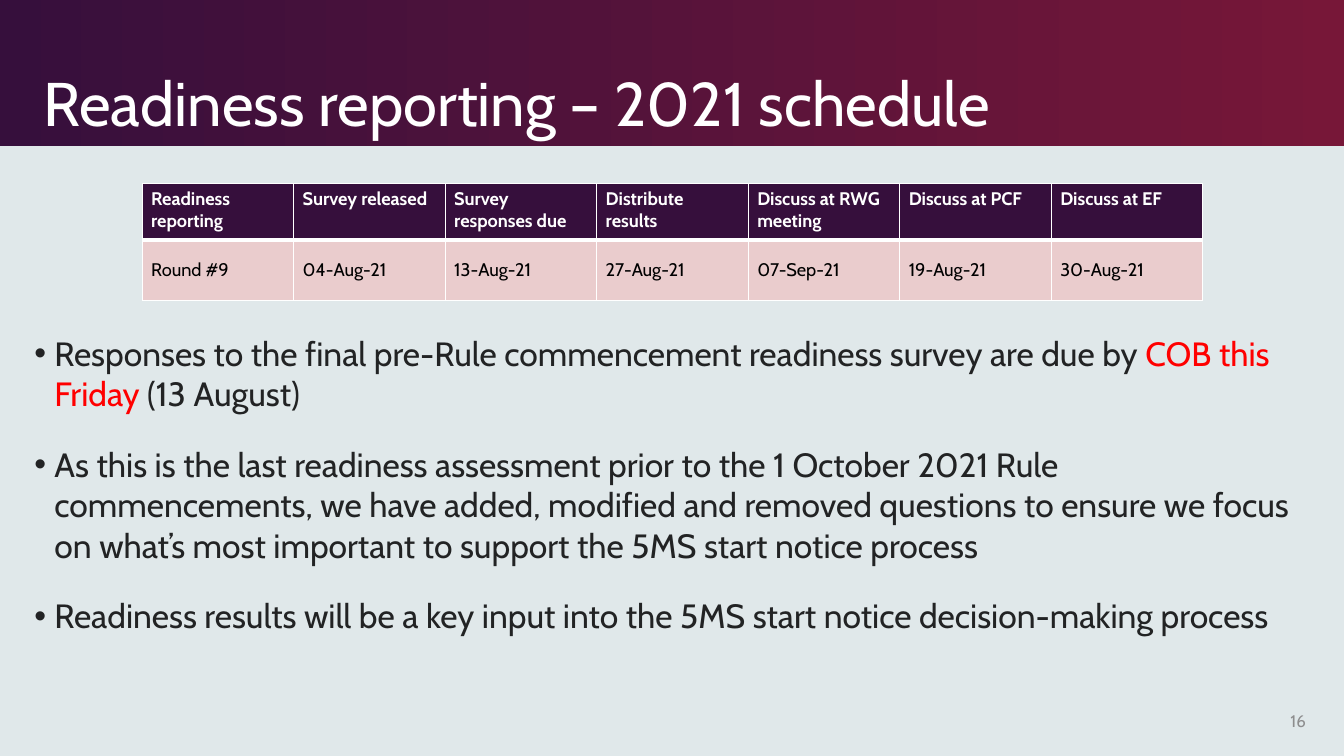
from lxml import etree
from pptx import Presentation
from pptx.dml.color import RGBColor
from pptx.enum.shapes import MSO_SHAPE
from pptx.enum.text import MSO_ANCHOR, MSO_AUTO_SIZE, PP_ALIGN
from pptx.oxml.ns import qn
from pptx.util import Pt

PX = 9144  # EMU in one px, 100 px to the inch
FONT = "Cabin"

PURPLE = RGBColor(0x36, 0x0F, 0x3C)
MAROON = RGBColor(0x77, 0x17, 0x38)
PINK = RGBColor(0xEA, 0xCC, 0xCD)
PALE = RGBColor(0xE0, 0xE8, 0xEA)
INK = RGBColor(0x22, 0x23, 0x24)
GREY = RGBColor(0x8D, 0x8D, 0x8E)
RED = RGBColor(0xFF, 0x00, 0x00)
BLACK = RGBColor(0x00, 0x00, 0x00)
WHITE = RGBColor(0xFF, 0xFF, 0xFF)

RECTANGLE = MSO_SHAPE.RECTANGLE
TOP, MIDDLE, BOTTOM = MSO_ANCHOR.TOP, MSO_ANCHOR.MIDDLE, MSO_ANCHOR.BOTTOM
LEFT, RIGHT = PP_ALIGN.LEFT, PP_ALIGN.RIGHT
NO_FIT = MSO_AUTO_SIZE.NONE

SCHEDULE = [
    ["Readiness reporting", "Survey released", "Survey responses due",
     "Distribute results", "Discuss at RWG meeting", "Discuss at PCF",
     "Discuss at EF"],
    ["Round #9", "04-Aug-21", "13-Aug-21", "27-Aug-21", "07-Sep-21",
     "19-Aug-21", "30-Aug-21"],
]
ROW_HEIGHTS = [56, 60]
ROW_FORMATS = [
    {"fill": PURPLE, "color": WHITE, "bold": True, "anchor": TOP, "bottom": 3},
    {"fill": PINK, "color": BLACK, "bold": False, "anchor": MIDDLE, "bottom": 1},
]

POINTS = [
    [("Responses to the final pre-Rule commencement readiness survey are due by ", INK),
     ("COB this Friday ", RED), ("(13 August)", INK)],
    [("As this is the last readiness assessment prior to the 1 October 2021 Rule "
      "commencements, we have added, modified and removed questions to ensure we "
      "focus on what’s most important to support the 5MS start notice process", INK)],
    [("Readiness results will be a key input into the 5MS start notice "
      "decision-making process", INK)],
]


def emu(box):
    return [v * PX for v in box]


def set_attrs(obj, **values):
    for name, value in values.items():
        setattr(obj, name, value)


def place(sp, box):
    left, top, width, height = emu(box)
    set_attrs(sp, left=left, top=top, width=width, height=height)


def add_run(p, text, size, color, bold=False):
    r = p.add_run()
    r.text = text
    set_attrs(r.font, name=FONT, size=Pt(size), bold=bold)
    r.font.color.rgb = color


def set_border(cell, side, width):
    ln = etree.SubElement(cell._tc.get_or_add_tcPr(), qn("a:" + side),
                          w=str(Pt(width)))
    fill = etree.SubElement(ln, qn("a:solidFill"))
    etree.SubElement(fill, qn("a:srgbClr"), val=str(WHITE))


def add_banner(slide, box, text):
    left, top, width, height = box
    title = slide.shapes.title
    band = slide.shapes.add_shape(RECTANGLE, *emu(box))
    band.shadow.inherit = False
    band.line.fill.background()
    band.fill.gradient()
    band.fill.gradient_angle = 0
    for stop, color in zip(band.fill.gradient_stops, (PURPLE, MAROON)):
        stop.color.rgb = color
    title.element.addprevious(band.element)  # band goes behind the title

    place(title, (left + 33, top + 14, 1102, height - 15))
    tf = title.text_frame
    set_attrs(tf, word_wrap=True, auto_size=NO_FIT, vertical_anchor=BOTTOM)
    p = tf.paragraphs[0]
    set_attrs(p, alignment=LEFT, line_spacing=0.9)
    add_run(p, text, 44, WHITE)


def add_schedule(slide, box):
    rows, cols = len(SCHEDULE), len(SCHEDULE[0])
    table = slide.shapes.add_table(rows, cols, *emu(box)).table
    for row, height in zip(table.rows, ROW_HEIGHTS):
        row.height = height * PX
    for row, texts, fmt in zip(table.rows, SCHEDULE, ROW_FORMATS):
        for cell, text in zip(row.cells, texts):
            set_attrs(cell, vertical_anchor=fmt["anchor"],
                      margin_left=9 * PX, margin_right=9 * PX,
                      margin_top=5 * PX, margin_bottom=5 * PX)
            add_run(cell.text_frame.paragraphs[0], text, 13,
                    fmt["color"], fmt["bold"])
            # Borders come before the fill in the cell properties
            top = 3 if texts is SCHEDULE[-1] else 1
            for side, width in (("lnL", 1), ("lnR", 1), ("lnT", top),
                                ("lnB", fmt["bottom"])):
                set_border(cell, side, width)
            cell.fill.solid()
            cell.fill.fore_color.rgb = fmt["fill"]


def add_points(slide, box):
    body = slide.placeholders[1]
    place(body, box)
    tf = body.text_frame
    set_attrs(tf, word_wrap=True, auto_size=NO_FIT, vertical_anchor=TOP)
    for i, runs in enumerate(POINTS):
        p = tf.add_paragraph() if i else tf.paragraphs[0]
        set_attrs(p, alignment=LEFT, space_before=Pt(10.9), space_after=Pt(10.9))
        pPr = p._p.get_or_add_pPr()
        pPr.set("marL", str(20 * PX))
        pPr.set("indent", str(-20 * PX))
        etree.SubElement(pPr, qn("a:buFont"), typeface="Arial")
        etree.SubElement(pPr, qn("a:buChar"), char="•")
        for text, color in runs:
            add_run(p, text, 24, color)


def add_page_number(slide, box, number):
    tf = slide.shapes.add_textbox(*emu(box)).text_frame
    set_attrs(tf, word_wrap=True, vertical_anchor=MIDDLE)
    p = tf.paragraphs[0]
    p.alignment = RIGHT
    add_run(p, number, 12, GREY)


def main():
    prs = Presentation()
    set_attrs(prs, slide_width=1333 * PX, slide_height=750 * PX)
    slide = prs.slides.add_slide(prs.slide_layouts[1])
    slide.background.fill.solid()
    slide.background.fill.fore_color.rgb = PALE

    add_banner(slide, (0, 0, 1333, 145), "Readiness reporting – 2021 schedule")
    add_page_number(slide, (1242, 695, 63, 40), "16")
    add_points(slide, (24, 325, 1286, 431))
    add_schedule(slide, (141, 182, 1052, 116))
    prs.save("out.pptx")


if __name__ == "__main__":
    main()
